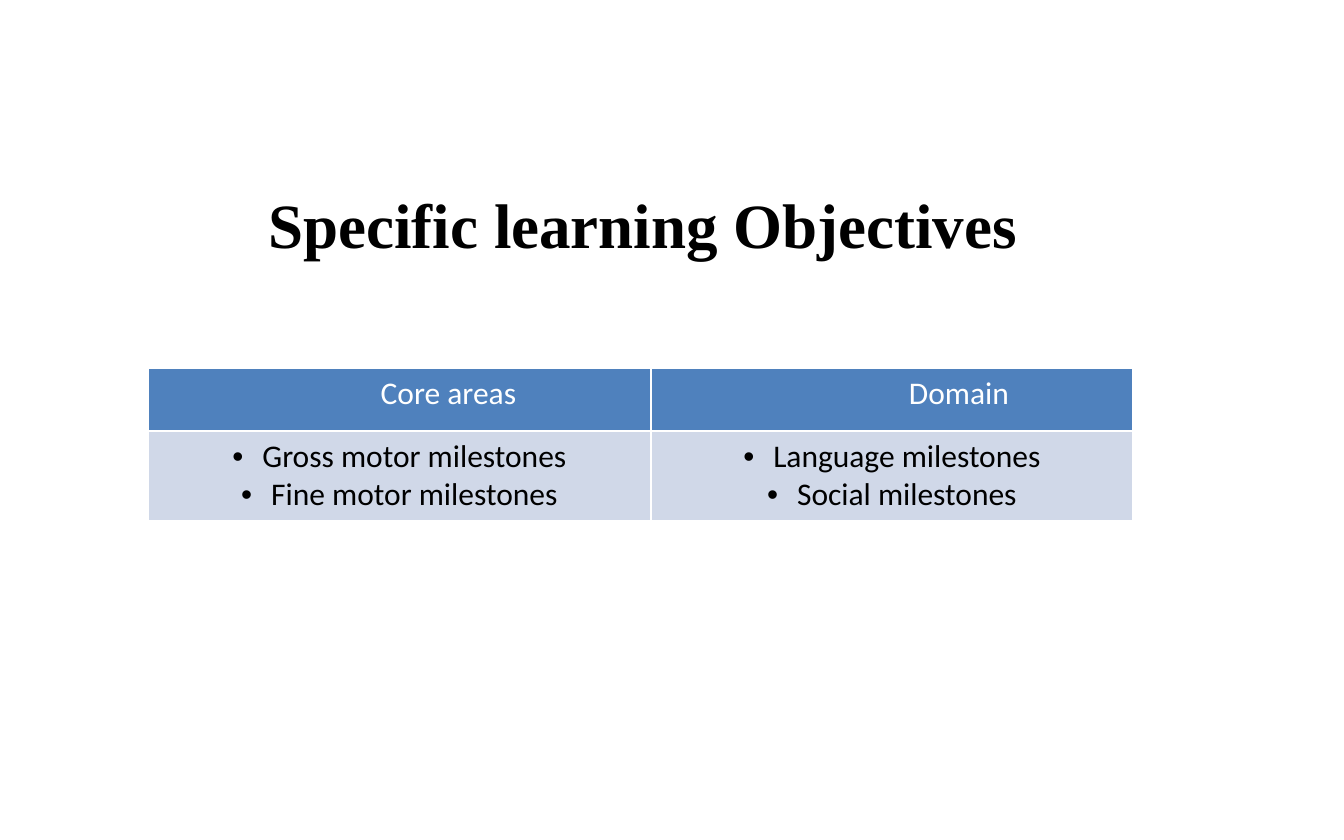
"""Build the learning objectives slide."""
from lxml import etree
from pptx import Presentation
from pptx.dml.color import RGBColor
from pptx.enum.text import MSO_AUTO_SIZE, PP_ALIGN
from pptx.oxml.ns import qn
from pptx.util import Pt

CENTER = PP_ALIGN.CENTER
GROW = MSO_AUTO_SIZE.SHAPE_TO_FIT_TEXT
EMU_PER_PX = 914400 / 126
COLORS = {"ink": "000000", "paper": "FFFFFF", "header": "4F81BD", "body": "D0D8E8"}


class SlideBuilder:
    """Hold the style and the current slide."""

    def __init__(self, page, heading_font, table_font):
        self.page = page
        self.heading_font = heading_font
        self.table_font = table_font

    def px(self, length):
        return round(length * EMU_PER_PX)

    def color(self, name):
        return RGBColor.from_string(COLORS[name])

    def background(self, name):
        fill = self.page.background.fill
        fill.solid()
        fill.fore_color.rgb = self.color(name)

    def add_text(self, para, words, font, size, color, bold=False):
        para.alignment = CENTER
        span = para.add_run()
        span.text = words
        span.font.name = font
        span.font.size = Pt(size)
        span.font.bold = bold
        span.font.color.rgb = self.color(color)

    def indent(self, para, left, bullet=False):
        properties = para._p.get_or_add_pPr()
        properties.set("marL", str(self.px(left)))
        if bullet:
            properties.set("indent", str(-self.px(left)))
            etree.SubElement(properties, qn("a:buFont")).set("typeface", "Arial")
            etree.SubElement(properties, qn("a:buChar")).set("char", "•")

    def title(self, words, left, top, width, height):
        box = self.page.shapes.add_textbox(*map(self.px, (left, top, width, height)))
        frame = box.text_frame
        frame.word_wrap = False
        frame.auto_size = GROW
        self.add_text(frame.paragraphs[0], words, self.heading_font, 36, "ink", True)

    def borders(self, cell, color, width):
        properties = cell._tc.get_or_add_tcPr()
        for position, side in enumerate(("lnL", "lnR", "lnT", "lnB")):
            line = etree.Element(qn(f"a:{side}"), w=str(Pt(width)))
            fill = etree.SubElement(line, qn("a:solidFill"))
            etree.SubElement(fill, qn("a:srgbClr")).set("val", COLORS[color])
            properties.insert(position, line)

    def cell(self, cell, lines, fill, ink, left, bullet=False):
        cell.fill.solid()
        cell.fill.fore_color.rgb = self.color(fill)
        self.borders(cell, "paper", 1)
        frame = cell.text_frame
        for number, words in enumerate(lines):
            para = frame.add_paragraph() if number else frame.paragraphs[0]
            self.add_text(para, words, self.table_font, 18, ink)
            self.indent(para, left, bullet)

    def table(self, columns, left, top, widths, heights):
        area = map(self.px, (left, top, sum(widths), sum(heights)))
        table = self.page.shapes.add_table(len(heights), len(columns), *area).table
        for row, height in zip(table.rows, heights):
            row.height = self.px(height)
        for index, (heading, shift, items) in enumerate(columns):
            table.columns[index].width = self.px(widths[index])
            self.cell(table.cell(0, index), [heading], "header", "paper", shift)
            self.cell(table.cell(1, index), items, "body", "ink", 30, True)


def main():
    deck = Presentation()
    page = deck.slides.add_slide(deck.slide_layouts[6])
    builder = SlideBuilder(page, "Times New Roman", "Calibri")
    deck.slide_width = builder.px(1344)
    deck.slide_height = builder.px(840)
    builder.background("paper")
    columns = [
        ("Core areas", 98, ["Gross motor milestones", "Fine motor milestones"]),
        ("Domain", 134, ["Language milestones", "Social milestones"]),
    ]
    builder.table(columns, 148, 368, (503, 482), (63, 89))
    builder.title("Specific learning Objectives", 244, 179, 798, 89)
    deck.save("out.pptx")


if __name__ == "__main__":
    main()
